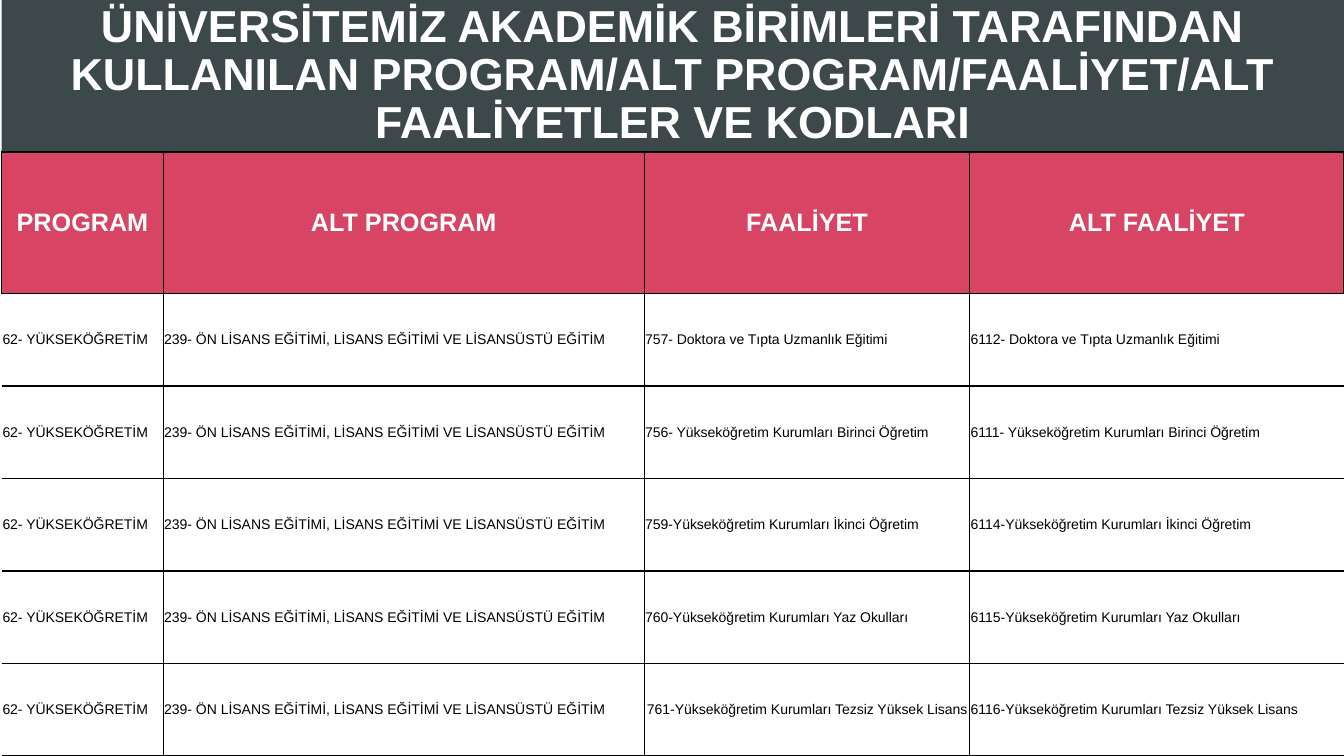
from lxml.etree import SubElement
from pptx import Presentation
from pptx.dml.color import RGBColor
from pptx.enum.text import MSO_ANCHOR, PP_ALIGN
from pptx.oxml.ns import qn
from pptx.util import Pt

TITLE = ("ÜNİVERSİTEMİZ AKADEMİK BİRİMLERİ TARAFINDAN KULLANILAN "
         "PROGRAM/ALT PROGRAM/FAALİYET/ALT FAALİYETLER VE KODLARI")
HEADERS = ["PROGRAM", "ALT PROGRAM", "FAALİYET", "ALT FAALİYET"]
PROGRAM = "62- YÜKSEKÖĞRETİM"
SUBPROGRAM = "239- ÖN LİSANS EĞİTİMİ, LİSANS EĞİTİMİ VE LİSANSÜSTÜ EĞİTİM"
ACTIVITIES = [
    ("757- ", "6112- ", "Doktora ve Tıpta Uzmanlık Eğitimi"),
    ("756- ", "6111- ", "Yükseköğretim Kurumları Birinci Öğretim"),
    ("759-", "6114-", "Yükseköğretim Kurumları İkinci Öğretim"),
    ("760-", "6115-", "Yükseköğretim Kurumları Yaz Okulları"),
    ("761-", "6116-", "Yükseköğretim Kurumları Tezsiz Yüksek Lisans"),
]

FONT = "Arial"
SLATE = RGBColor(0x3C, 0x48, 0x49)
CRIMSON = RGBColor(0xD0, 0x21, 0x47)
WHITE = RGBColor(0xFF, 0xFF, 0xFF)
BLACK = RGBColor(0, 0, 0)

SLIDE_WIDTH, SLIDE_HEIGHT = 960, 540
LEFT, TITLE_HEIGHT = 1.2, 108.6
COLUMN_WIDTHS = [115.5, 343.5, 232.6, 267.2]
HEADER_HEIGHT, ROW_HEIGHT = 101, 66.1
HEADER_OPACITY = 84


def format_text(paragraph, size, color, bold, alignment):
    paragraph.alignment = alignment
    for run in paragraph.runs:
        run.font.name = FONT
        run.font.size = Pt(size)
        run.font.bold = bold
        run.font.color.rgb = color


def set_borders(cell, widths):
    """Draw black borders; widths maps L, R, T, B to points, 0 meaning none."""
    properties = cell._tc.get_or_add_tcPr()
    for side in "LRTB":
        line = SubElement(properties, qn(f"a:ln{side}"), w=str(Pt(widths[side])))
        if widths[side]:
            fill = SubElement(line, qn("a:solidFill"))
            SubElement(fill, qn("a:srgbClr"), val=str(BLACK))
        else:
            SubElement(line, qn("a:noFill"))


def fill_cell(cell, color, opacity=100):
    cell.fill.solid()
    cell.fill.fore_color.rgb = color
    if opacity < 100:
        fill = cell._tc.tcPr.find(qn("a:solidFill"))
        SubElement(fill[0], qn("a:alpha"), val=str(opacity * 1000))


def add_title(slide):
    title = slide.shapes.title
    title.left, title.top = Pt(LEFT), Pt(0)
    title.width, title.height = Pt(sum(COLUMN_WIDTHS)), Pt(TITLE_HEIGHT)
    title.fill.solid()
    title.fill.fore_color.rgb = SLATE
    frame = title.text_frame
    frame.text = TITLE
    frame.word_wrap = True
    frame.vertical_anchor = MSO_ANCHOR.MIDDLE
    paragraph = frame.paragraphs[0]
    paragraph.line_spacing = 0.9
    paragraph.space_before = Pt(0)
    format_text(paragraph, 32, WHITE, True, PP_ALIGN.CENTER)


def add_code_table(slide):
    rows = [HEADERS] + [
        [PROGRAM, SUBPROGRAM, code + name, subcode + name]
        for code, subcode, name in ACTIVITIES
    ]
    heights = [HEADER_HEIGHT] + [ROW_HEIGHT] * len(ACTIVITIES)
    table = slide.shapes.add_table(
        len(rows), len(HEADERS), Pt(LEFT), Pt(TITLE_HEIGHT),
        Pt(sum(COLUMN_WIDTHS)), Pt(sum(heights))).table
    table.first_row = table.horz_banding = False
    for column, width in zip(table.columns, COLUMN_WIDTHS):
        column.width = Pt(width)

    last_row, last_column = len(rows) - 1, len(HEADERS) - 1
    for r, texts in enumerate(rows):
        table.rows[r].height = Pt(heights[r])
        for c, text in enumerate(texts):
            cell = table.cell(r, c)
            cell.text = text
            cell.vertical_anchor = MSO_ANCHOR.MIDDLE
            cell.margin_left = cell.margin_right = cell.margin_top = Pt(0.6)
            cell.margin_bottom = Pt(0)
            paragraph = cell.text_frame.paragraphs[0]
            borders = dict.fromkeys("LRTB", 1)
            if r == 0:
                set_borders(cell, borders)
                fill_cell(cell, CRIMSON, HEADER_OPACITY)
                format_text(paragraph, 18, WHITE, True, PP_ALIGN.CENTER)
                continue
            if c == 0:
                borders["L"] = 0
            if c == last_column:
                borders["R"] = 0.5
            set_borders(cell, borders)
            fill_cell(cell, WHITE)
            centered = (r, c) == (last_row, 2)
            format_text(paragraph, 10, BLACK, False,
                        PP_ALIGN.CENTER if centered else PP_ALIGN.LEFT)


def main():
    presentation = Presentation()
    presentation.slide_width = Pt(SLIDE_WIDTH)
    presentation.slide_height = Pt(SLIDE_HEIGHT)
    slide = presentation.slides.add_slide(presentation.slide_layouts[5])
    add_title(slide)
    add_code_table(slide)
    presentation.save("out.pptx")


if __name__ == "__main__":
    main()
